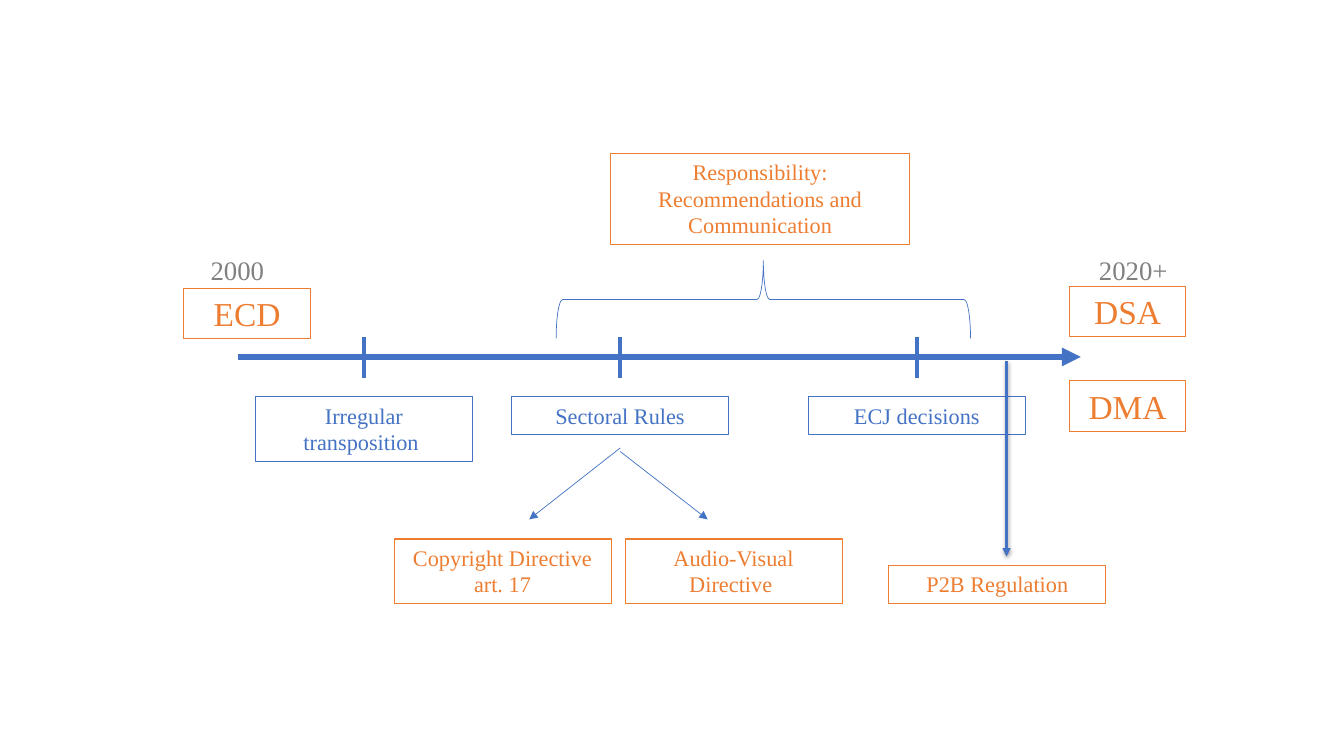
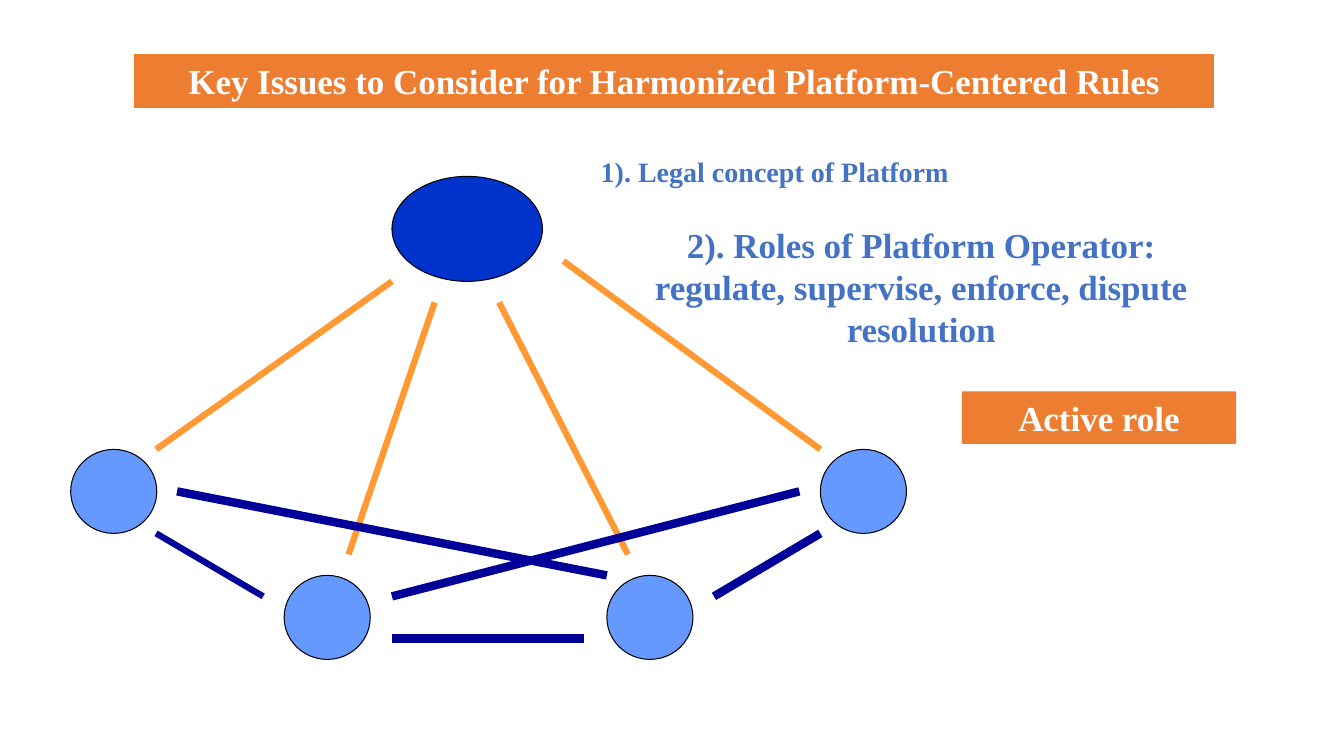
"""Build two slides: a regulation timeline and a platform network."""
from dataclasses import dataclass
from typing import Any

from lxml.etree import SubElement
from pptx import Presentation
from pptx.dml.color import RGBColor
from pptx.enum.shapes import MSO_CONNECTOR, MSO_SHAPE
from pptx.enum.text import MSO_ANCHOR, PP_ALIGN
from pptx.oxml.ns import qn
from pptx.util import Pt

FONT = "Times New Roman"
BLUE, ORANGE, GRAY = "4472C4", "ED7D31", "808080"
WHITE, BLACK = "FFFFFF", "000000"
ROYAL, SKY, AMBER, NAVY = "0033CC", "6699FF", "FF9933", "000099"
SMALL, LARGE, HEAD = 15.9, 23.9, 25
WIDE, ROW = 155, 27


@dataclass(frozen=True)
class Box:
    """Frame, text and style of a label."""
    left: float
    top: float
    width: float
    height: float
    text: str
    color: str = ORANGE
    size: float = SMALL


@dataclass(frozen=True)
class Line:
    """Ends and style of a straight line."""
    x1: float
    y1: float
    x2: float
    y2: float
    color: str = BLUE
    width: float = 4.5
    arrow: bool = False
    shade: bool = False


def paint(color: str) -> RGBColor:
    """Turn a hex string into a colour."""
    return RGBColor.from_string(color)


def write(shape: Any, text: str, *, size: float, color: str,
          bold: bool = False, inset: float = 7.2) -> None:
    """Put centred text into a shape."""
    frame = shape.text_frame
    frame.word_wrap = True
    frame.vertical_anchor = MSO_ANCHOR.TOP
    frame.margin_left = frame.margin_right = Pt(inset)
    frame.margin_top = frame.margin_bottom = Pt(3.6)
    para = frame.paragraphs[0]
    para.alignment = PP_ALIGN.CENTER
    run = para.add_run()
    run.text = text
    font = run.font
    font.name, font.size, font.bold = FONT, Pt(size), bold
    font.color.rgb = paint(color)


def draw(shapes: Any, kind: MSO_SHAPE, left: float, top: float, width: float,
         height: float, *, fill: str = "", line: str = "",
         weight: float = 0.75) -> Any:
    """Add a preset shape with optional fill and outline."""
    shape = shapes.add_shape(kind, Pt(left), Pt(top), Pt(width), Pt(height))
    shape.shadow.inherit = False
    if fill:
        shape.fill.solid()
        shape.fill.fore_color.rgb = paint(fill)
    else:
        shape.fill.background()
    if line:
        shape.line.color.rgb = paint(line)
        shape.line.width = Pt(weight)
    else:
        shape.line.fill.background()
    return shape


def frame(shapes: Any, box: Box) -> None:
    """Add an outlined label."""
    shape = draw(shapes, MSO_SHAPE.RECTANGLE, box.left, box.top, box.width,
                 box.height, line=box.color)
    write(shape, box.text, size=box.size, color=box.color)


def banner(shapes: Any, box: Box, line: str = "") -> None:
    """Add a filled label with bold white text."""
    shape = draw(shapes, MSO_SHAPE.RECTANGLE, box.left, box.top, box.width,
                 box.height, fill=box.color, line=line)
    write(shape, box.text, size=box.size, color=WHITE, bold=True)


def label(shapes: Any, box: Box, *, bold: bool = False,
          inset: float = 7.2) -> None:
    """Add a plain text box."""
    shape = shapes.add_textbox(Pt(box.left), Pt(box.top), Pt(box.width),
                               Pt(box.height))
    write(shape, box.text, size=box.size, color=box.color, bold=bold,
          inset=inset)


def link(shapes: Any, line: Line) -> None:
    """Add a straight line, with arrowhead and shadow if asked."""
    item = shapes.add_connector(MSO_CONNECTOR.STRAIGHT, Pt(line.x1),
                                Pt(line.y1), Pt(line.x2), Pt(line.y2))
    item.line.color.rgb = paint(line.color)
    item.line.width = Pt(line.width)
    props = item._element.spPr
    if line.arrow:
        SubElement(props.find(qn("a:ln")), qn("a:tailEnd"), type="triangle")
    effect = SubElement(props, qn("a:effectLst"))
    if line.shade:
        outer = SubElement(effect, qn("a:outerShdw"), blurRad=str(Pt(3)),
                           dist=str(Pt(1.6)), dir="5400000", rotWithShape="0")
        tint = SubElement(outer, qn("a:srgbClr"), val=BLACK)
        SubElement(tint, qn("a:alpha"), val="38000")


def timeline(shapes: Any) -> None:
    """Draw the path from the first directive to the new acts."""
    link(shapes, Line(170, 255, 772, 255, arrow=True))
    stages = ((260, 46, "Irregular transposition "),
              (443, ROW, "Sectoral Rules"),
              (655, ROW, "ECJ decisions"))
    for mid, height, text in stages:
        link(shapes, Line(mid, 240.5, mid, 270, width=3))
        frame(shapes, Box(mid - WIDE / 2, 283.5, WIDE, height, text, BLUE))
    boxes = (
        Box(131, 206, 91, 36, "ECD", size=LARGE),
        Box(764, 204.5, 83, 36, "DSA", size=LARGE),
        Box(764, 272, 83, 36, "DMA", size=LARGE),
        Box(281.5, 385, WIDE, 46, "Copyright Directive art. 17"),
        Box(446.5, 385, WIDE, 46, "Audio-Visual Directive "),
        Box(635, 404, WIDE, ROW, "P2B Regulation"),
        Box(436, 109.5, 214, 65,
            "Responsibility: Recommendations and Communication"),
    )
    for box in boxes:
        frame(shapes, box)
    brace = draw(shapes, MSO_SHAPE.LEFT_BRACE, 517.5, 66, 55.5, 296,
                 line=BLUE, weight=0.5)
    brace.rotation = 90
    for left, width, text in ((143, 53, "2000"), (772, 75, "2020+")):
        label(shapes, Box(left, 178, width, 29.5, text, GRAY, 19.1), inset=3.6)
    arrows = (
        Line(443, 320, 378, 371, width=0.5, arrow=True),
        Line(443, 322.5, 505.5, 371, width=0.5, arrow=True),
        Line(719, 258, 719, 397.5, width=2, arrow=True, shade=True),
    )
    for arrow in arrows:
        link(shapes, arrow)


def network(shapes: Any) -> None:
    """Draw the platform, its users and the key issues."""
    group = shapes.add_group_shape().shapes
    draw(group, MSO_SHAPE.OVAL, 280, 126, 107.5, 75, fill=ROYAL, line=BLACK)
    for left, top in ((50.5, 321), (203, 411), (433.5, 411), (586, 321)):
        draw(group, MSO_SHAPE.OVAL, left, top, 61.5, 60, fill=SKY, line=BLACK)
    lines = (
        Line(111.5, 321, 280, 201, AMBER),
        Line(310.5, 216, 249, 396, AMBER),
        Line(356.5, 216, 448.5, 396, AMBER),
        Line(402.5, 186.5, 586, 321, AMBER),
        Line(111.5, 381, 188, 426, NAVY),
        Line(280, 456, 417.5, 456, NAVY, 6),
        Line(510, 426, 586, 381, NAVY, 6),
        Line(126.5, 351, 433.5, 411, NAVY, 6),
        Line(280, 426, 571, 351, NAVY, 6),
    )
    for line in lines:
        link(group, line)
    issues = (
        Box(404, 107, 304, 32, "1). Legal concept of Platform ", BLUE, 20),
        Box(448.5, 156, 419, 98, "2). Roles of Platform Operator: regulate, "
            "supervise, enforce, dispute resolution", BLUE, HEAD),
    )
    for issue in issues:
        label(shapes, issue, bold=True)
    title = "Key Issues to Consider for Harmonized Platform-Centered Rules"
    banner(shapes, Box(96, 39, 771, 37.5, title, size=HEAD), line=ORANGE)
    banner(shapes, Box(687, 279.5, 196, 37.5, "Active role", size=HEAD))


def main() -> None:
    """Build and save the deck."""
    deck = Presentation()
    deck.slide_width, deck.slide_height = Pt(960), Pt(540)
    for build in (timeline, network):
        build(deck.slides.add_slide(deck.slide_layouts[6]).shapes)
    deck.save("out.pptx")


if __name__ == "__main__":
    main()
